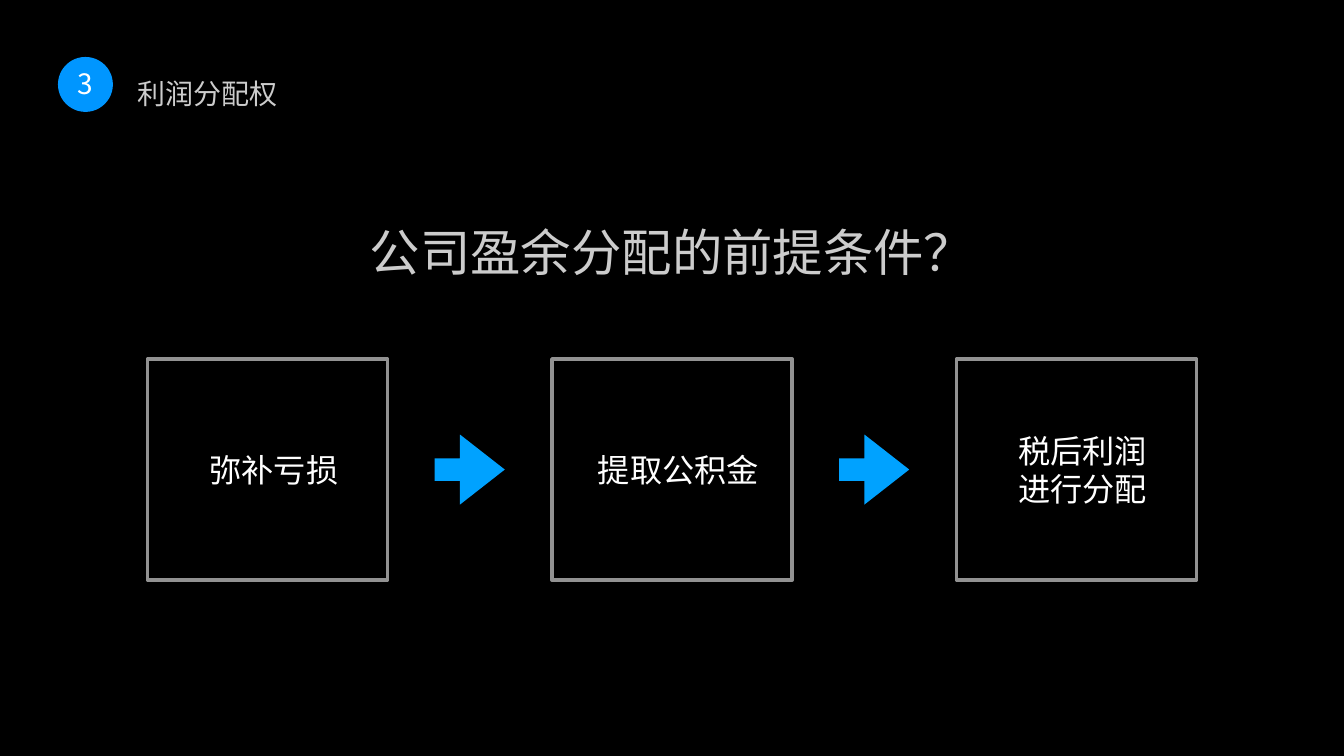
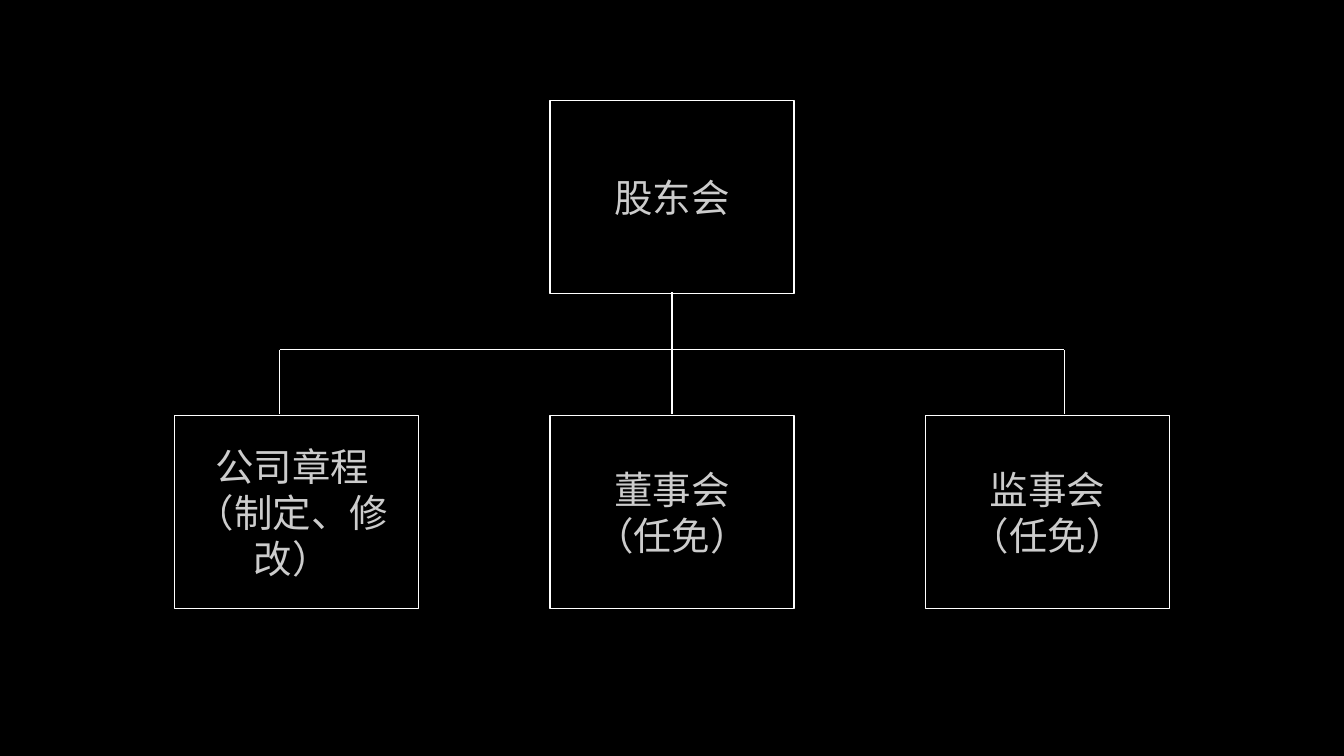
import dataclasses

import lxml.etree
import pptx
import pptx.dml.color
import pptx.enum.shapes
import pptx.enum.text
import pptx.oxml.ns
import pptx.util

SHAPE = pptx.enum.shapes.MSO_SHAPE
ANCHOR = pptx.enum.text.MSO_ANCHOR
ALIGN = pptx.enum.text.PP_ALIGN
FIT = pptx.enum.text.MSO_AUTO_SIZE
qn = pptx.oxml.ns.qn


@dataclasses.dataclass(frozen=True)
class Theme:
    """Colours, type sizes and line widths of the deck."""
    font: str = "Noto Sans CJK SC"
    back: str = "000000"
    white: str = "FFFFFF"
    badge: str = "0096FF"
    arrow: str = "00A2FF"
    frame: str = "929292"
    soft: int = 80
    label: int = 40
    question: int = 72
    step: int = 46
    organ: int = 55
    thick: int = 5
    thin: int = 2


class Painter:
    """Draws on the current slide over a grid of 160 columns by 90 rows."""

    def __init__(self, theme):
        self.theme = theme
        self.deck = pptx.Presentation()
        self.deck.slide_width = pptx.util.Inches(26.67)
        self.deck.slide_height = pptx.util.Inches(15)
        self.page = None

    def new_page(self):
        """Start a blank slide on the deck's background."""
        self.page = self.deck.slides.add_slide(self.deck.slide_layouts[6])
        fill = self.page.background.fill
        fill.solid()
        fill.fore_color.rgb = self.colour(self.theme.back)

    def colour(self, code):
        return pptx.dml.color.RGBColor.from_string(code)

    def across(self, columns):
        return round(self.deck.slide_width * columns / 160)

    def down(self, rows):
        return round(self.deck.slide_height * rows / 90)

    def area(self, centre, middle, width, height):
        """Turn a centred grid area into left, top, width and height."""
        return (self.across(centre - width / 2), self.down(middle - height / 2),
                self.across(width), self.down(height))

    def shape(self, kind, area, fill=None, line=None, weight=0):
        """Add a preset shape with a plain fill or outline."""
        box = self.page.shapes.add_shape(kind, *self.area(*area))
        box.shadow.inherit = False
        if fill:
            box.fill.solid()
            box.fill.fore_color.rgb = self.colour(fill)
        else:
            box.fill.background()
        if line:
            box.line.color.rgb = self.colour(line)
            box.line.width = pptx.util.Pt(weight)
        else:
            box.line.fill.background()
        return box

    def label(self, box, lines, size, anchor=ANCHOR.MIDDLE, align=ALIGN.CENTER,
              spacing=None, opacity=100, indent=0):
        """Fill a shape with paragraphs of one style."""
        frame = box.text_frame
        frame.word_wrap = True
        frame.vertical_anchor = anchor
        frame.margin_left = frame.margin_right = pptx.util.Inches(0.08)
        frame.margin_top = frame.margin_bottom = pptx.util.Inches(0.08)
        for index, line in enumerate(lines):
            para = frame.add_paragraph() if index else frame.paragraphs[0]
            para.alignment = align
            if spacing:
                para.line_spacing = spacing
            if indent:
                para.level = 1
                properties = para._p.get_or_add_pPr()
                properties.set("marL", "0")
                properties.set("indent", str(pptx.util.Inches(indent)))
            span = para.add_run()
            span.text = line
            span.font.size = pptx.util.Pt(size)
            span.font.name = self.theme.font
            span.font.color.rgb = self.colour(self.theme.white)
            style = span._r.get_or_add_rPr()
            lxml.etree.SubElement(style, qn("a:ea")).set("typeface", self.theme.font)
            if opacity < 100:
                tint = style.find(".//" + qn("a:srgbClr"))
                lxml.etree.SubElement(tint, qn("a:alpha")).set("val", str(opacity * 1000))

    def text(self, area, lines, size, wrap=True, **style):
        """Add a softened text box that grows with its text."""
        box = self.page.shapes.add_textbox(*self.area(*area))
        self.label(box, lines, size, opacity=self.theme.soft, **style)
        box.text_frame.word_wrap = wrap
        box.text_frame.auto_size = FIT.SHAPE_TO_FIT_TEXT

    def line(self, start, end):
        """Add a thin white line between two grid points."""
        link = self.page.shapes.add_connector(
            pptx.enum.shapes.MSO_CONNECTOR.STRAIGHT,
            self.across(start[0]), self.down(start[1]),
            self.across(end[0]), self.down(end[1]))
        link.line.color.rgb = self.colour(self.theme.white)
        link.line.width = pptx.util.Pt(self.theme.thin)
        lxml.etree.SubElement(link._element.spPr, qn("a:effectLst"))


def profit_steps(painter):
    """Build the three-step condition for sharing profit."""
    theme = painter.theme
    painter.new_page()
    painter.text((24.7, 10.05, 17.7, 4.26), ["利润分配权"], theme.label,
                 wrap=False, align=ALIGN.LEFT, spacing=1.5)
    badge = painter.shape(SHAPE.OVAL, (10.17, 10.05, 6.54, 6.54), fill=theme.badge)
    painter.label(badge, ["3"], theme.label, anchor=ANCHOR.BOTTOM)
    painter.text((80, 26.34, 73, 6.96), ["公司盈余分配的前提条件？"],
                 theme.question, wrap=False, spacing=2.0)
    pitch, middle = 48.15, 55.9
    steps = [["弥补亏损"], ["提取公积金"], ["税后利润", "进行分配"]]
    for index, lines in enumerate(steps):
        box = painter.shape(SHAPE.RECTANGLE, (80 + (index - 1) * pitch, middle, 28.56, 26.34),
                            line=theme.frame, weight=theme.thick)
        painter.label(box, lines, theme.step, indent=0.25)
    for side in (-0.5, 0.5):
        arrow = painter.shape(SHAPE.RIGHT_ARROW, (80 + side * pitch, middle, 8.34, 8.34),
                              fill=theme.arrow)
        arrow.adjustments[0] = 0.32
        arrow.adjustments[1] = 0.64


def shareholder_chart(painter):
    """Build the tree of what the shareholders' meeting controls."""
    theme = painter.theme
    painter.new_page()
    pitch, top_middle, low_middle = 44.72, 23.43, 60.93
    organs = [
        (80, top_middle, 80, 26, 5.58, ["股东会"]),
        (80 - pitch, low_middle, 34.77, 30.18, 12.48, ["公司章程", "（制定、修改）"]),
        (80, low_middle, 80, 26, 12.48, ["董事会", "（任免）"]),
        (80 + pitch, low_middle, 80 + pitch, 29.22, 12.48, ["监事会", "（任免）"]),
    ]
    for centre, middle, *_ in organs:
        painter.shape(SHAPE.RECTANGLE, (centre, middle, 29.04, 22.98),
                      line=theme.white, weight=theme.thin)
    for _, middle, centre, width, height, lines in organs:
        painter.text((centre, middle, width, height), lines, theme.organ)
    reach, rail, low_top = 46.7, 41.64, 49.3
    painter.line((80, low_top), (80, 34.8))
    painter.line((80 - reach, rail), (80 + reach, rail))
    for side in (-reach, reach):
        painter.line((80 + side, low_top), (80 + side, rail))


def main():
    painter = Painter(Theme())
    profit_steps(painter)
    shareholder_chart(painter)
    painter.deck.save("out.pptx")


if __name__ == "__main__":
    main()
